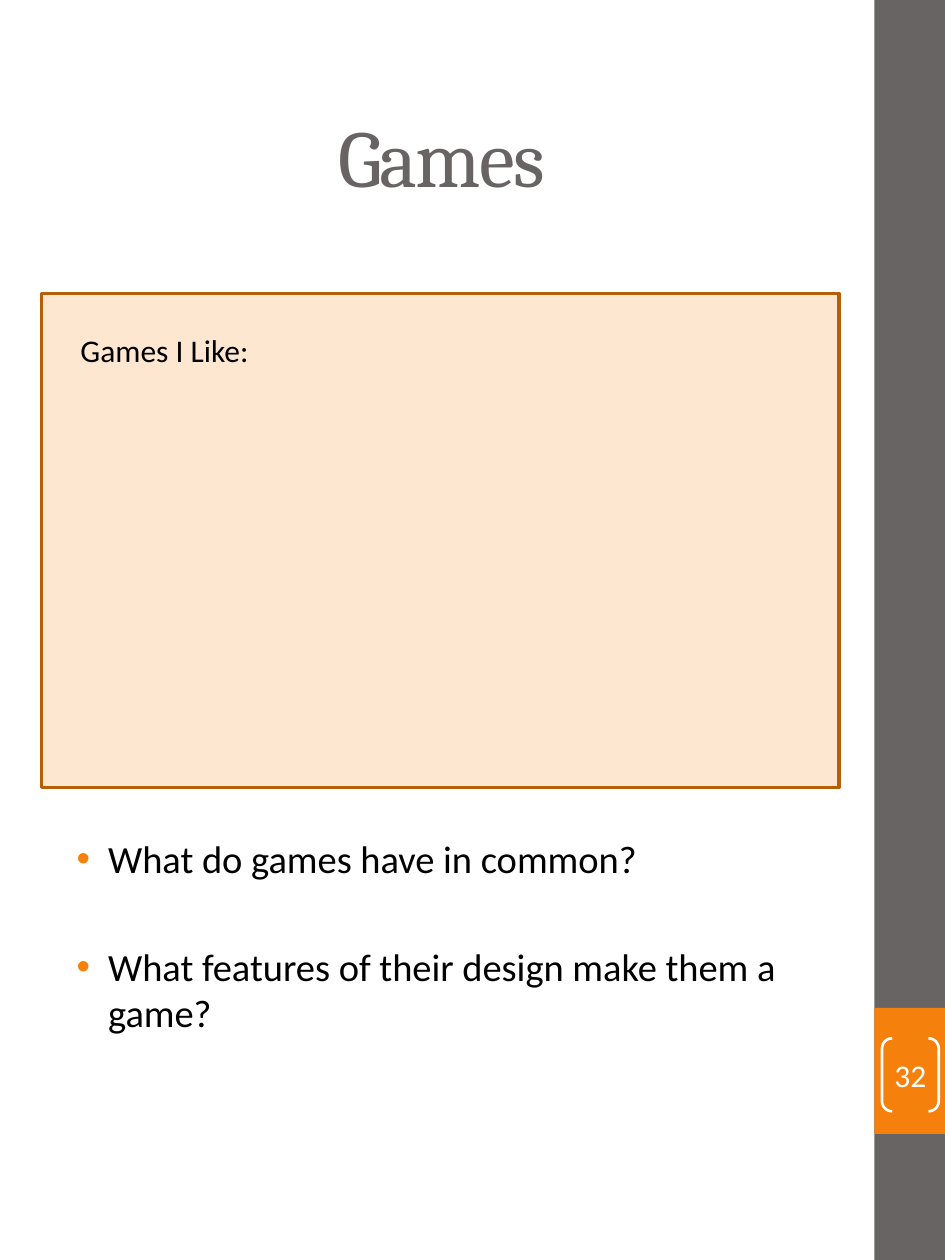
from lxml import etree
from pptx import Presentation
from pptx import util as u
from pptx.dml.color import RGBColor
from pptx.enum import shapes, text
from pptx.oxml.ns import qn

GREY = RGBColor(0x69, 0x64, 0x64)
ORANGE = RGBColor(0xF5, 0x80, 0x0B)
BROWN = RGBColor(0xB5, 0x5F, 0x08)
WHITE = RGBColor(0xFF, 0xFF, 0xFF)
BLACK = RGBColor(0, 0, 0)

W, H = 7.5, 10
BAR_LEFT = 6.94
CONTENT_LEFT, CONTENT_WIDTH = 0.38, 6.25


def add_shape(s, kind, box, fill=None, line=None, line_width=1):
    sp = s.shapes.add_shape(kind, *map(u.Inches, box))
    sp.shadow.inherit = False
    if fill is None:
        sp.fill.background()
    else:
        sp.fill.solid()
        sp.fill.fore_color.rgb = fill
    if line is None:
        sp.line.fill.background()
    else:
        sp.line.color.rgb = line
        sp.line.width = u.Pt(line_width)
    return sp


def set_alpha(sp, percent):
    color = sp.fill._xPr.find(qn("a:solidFill"))[0]
    etree.SubElement(color, qn("a:alpha"), val=str(percent * 1000))


def write(sp, lines, size, color, font="Calibri", align=text.PP_ALIGN.LEFT,
          anchor=text.MSO_ANCHOR.TOP):
    tf = sp.text_frame
    tf.word_wrap = True
    tf.vertical_anchor = anchor
    tf.text = "\n".join(lines)
    for p in tf.paragraphs:
        p.alignment = align
        p.font.name = font
        p.font.size = u.Pt(size)
        p.font.color.rgb = color
    return tf


def add_text(s, box, lines, size, color, **style):
    sp = s.shapes.add_textbox(*map(u.Inches, box))
    return write(sp, lines, size, color, **style)


def set_bullet(p, color):
    pPr = p._p.get_or_add_pPr()
    pPr.set("marL", str(u.Inches(0.38)))
    pPr.set("indent", str(u.Inches(-0.25)))
    clr = etree.Element(qn("a:buClr"))
    etree.SubElement(clr, qn("a:srgbClr"), val=str(color))
    font = etree.Element(qn("a:buFont"), typeface="Arial")
    char = etree.Element(qn("a:buChar"), char="•")
    # Bullet settings come before the default run properties
    for el in (clr, font, char):
        pPr.find(qn("a:defRPr")).addprevious(el)


def main():
    prs = Presentation()
    prs.slide_width, prs.slide_height = u.Inches(W), u.Inches(H)
    s = prs.slides.add_slide(prs.slide_layouts[6])
    rect = shapes.MSO_SHAPE.RECTANGLE
    middle, center = text.MSO_ANCHOR.MIDDLE, text.PP_ALIGN.CENTER

    # Side bar with the page number block
    add_shape(s, rect, (BAR_LEFT, 0, W - BAR_LEFT, H), GREY)
    add_shape(s, rect, (BAR_LEFT, 0.8 * H, W - BAR_LEFT, 0.1 * H), ORANGE)

    # Title
    tf = add_text(s, (CONTENT_LEFT, 0.4, CONTENT_WIDTH, 1.67), ["Games"], 46,
                  GREY, font="Cambria", align=center, anchor=middle)
    tf.paragraphs[0].runs[0].font._element.set("spc", "-100")

    # Questions
    tf = add_text(s, (CONTENT_LEFT, 6.58, CONTENT_WIDTH, 2.75),
                  ["What do games have in common?",
                   "What features of their design make them a game?"],
                  22, BLACK)
    for p in tf.paragraphs:
        set_bullet(p, ORANGE)
    tf.paragraphs[1].space_before = u.Pt(35)

    # Answer box
    sp = add_shape(s, rect, (0.33, 2.33, 6.33, 3.92), ORANGE, BROWN, 2)
    set_alpha(sp, 19)
    add_text(s, (0.54, 2.58, 5.75, 0.4), ["Games I Like:"], 18, BLACK)

    # Page number
    sp = add_shape(s, shapes.MSO_SHAPE.DOUBLE_BRACKET, (7, 8.24, 0.45, 0.58),
                   line=WHITE, line_width=1.5)
    sp.adjustments[0] = 0.18
    tf = write(sp, ["32"], 18, WHITE, align=center, anchor=middle)
    tf.margin_left = tf.margin_right = tf.margin_top = tf.margin_bottom = 0

    prs.save("out.pptx")


if __name__ == "__main__":
    main()
